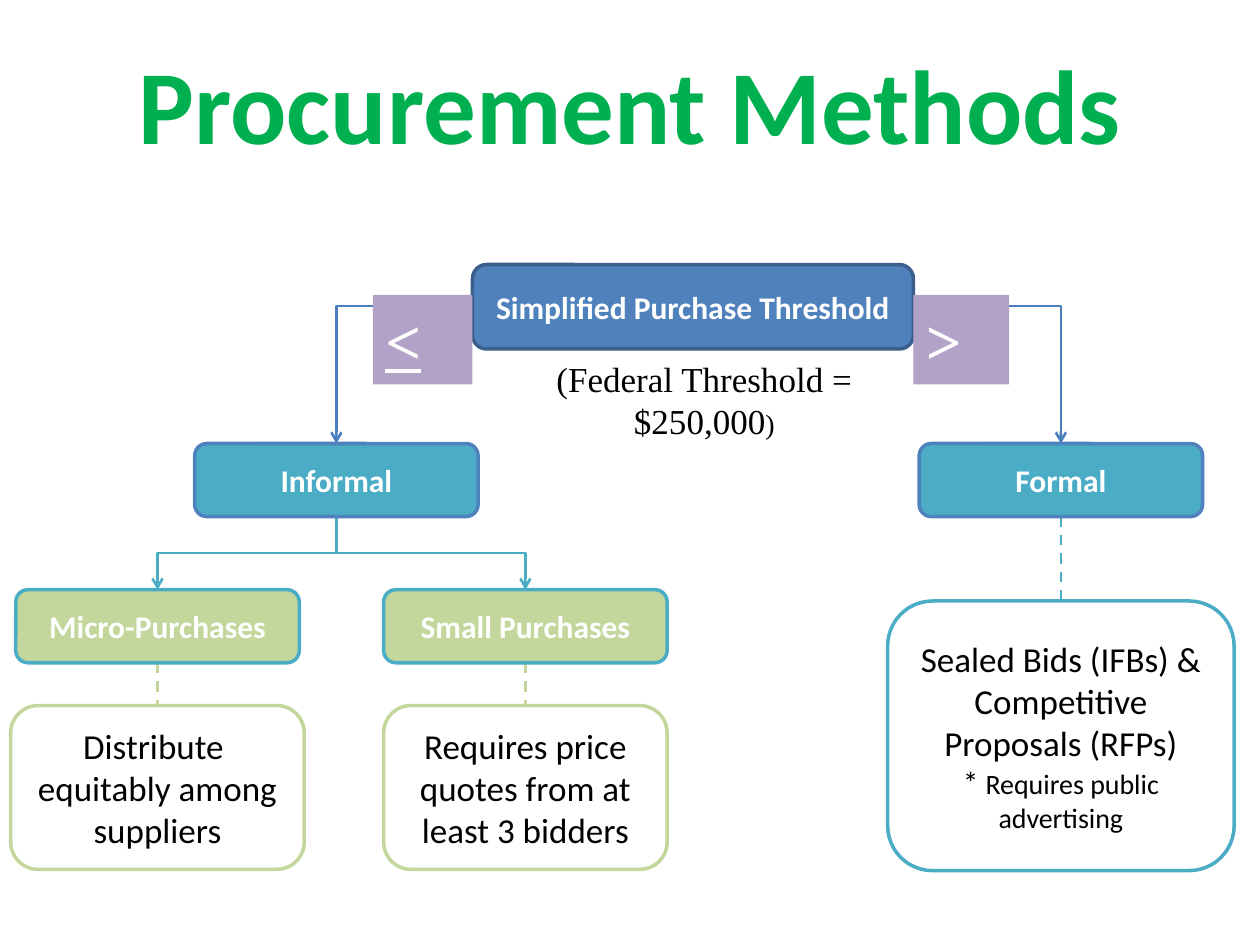
from dataclasses import dataclass

from lxml import etree
from pptx import Presentation
from pptx.dml.color import RGBColor
from pptx.enum.dml import MSO_LINE
from pptx.enum.shapes import MSO_CONNECTOR, MSO_SHAPE
from pptx.enum.text import MSO_ANCHOR, MSO_AUTO_SIZE, PP_ALIGN
from pptx.oxml.ns import qn
from pptx.util import Inches, Pt

ROUNDED, RECTANGLE = MSO_SHAPE.ROUNDED_RECTANGLE, MSO_SHAPE.RECTANGLE
STRAIGHT, ELBOW = MSO_CONNECTOR.STRAIGHT, MSO_CONNECTOR.ELBOW
DASH = MSO_LINE.DASH
MIDDLE, TOP = MSO_ANCHOR.MIDDLE, MSO_ANCHOR.TOP
CENTER, LEFT = PP_ALIGN.CENTER, PP_ALIGN.LEFT
GROW = MSO_AUTO_SIZE.SHAPE_TO_FIT_TEXT


@dataclass(frozen=True)
class Theme:
    """Colours, fonts and type sizes of the slide."""
    white: str = "FFFFFF"
    black: str = "000000"
    green: str = "00B050"
    blue: str = "4F81BD"
    dark_blue: str = "3A5F8C"
    route_blue: str = "4B7EBC"
    teal: str = "4BACC6"
    lime: str = "C3D69B"
    purple: str = "B3A2C7"
    sans: str = "Calibri"
    serif: str = "Times New Roman"
    title: int = 60
    sign: int = 36
    body: int = 20
    label: int = 18
    small: int = 16
    outline: float = 2
    connector: float = 1.5


THEME = Theme()
LABEL_WIDTH, LABEL_HEIGHT = 2.25, 0.58
THRESHOLD_LEFT, THRESHOLD_RIGHT = 3.75, 7.25
MICRO_X, INFORMAL_X, SMALL_X, FORMAL_X = 1.25, 2.67, 4.17, 8.42
ROUTE_Y, METHOD_Y, PURCHASE_Y, DETAIL_Y, FORMAL_DETAIL_Y = 2.43, 3.52, 4.68, 5.6, 4.77


def rgb(colour):
    """Turn a hex string into a colour."""
    return RGBColor.from_string(colour)


def write(frame, paragraphs, colour, font=THEME.sans, bold=False, align=CENTER, anchor=MIDDLE):
    """Fill a text frame with paragraphs, each a list of (text, size) runs."""
    frame.word_wrap = True
    frame.vertical_anchor = anchor
    for index, pieces in enumerate(paragraphs):
        paragraph = frame.add_paragraph() if index else frame.paragraphs[0]
        paragraph.alignment = align
        for text, size in pieces:
            run = paragraph.add_run()
            run.text = text
            run.font.name = font
            run.font.size = Pt(size)
            run.font.bold = bold
            run.font.color.rgb = rgb(colour)


def add_box(slide, preset, bounds, fill, outline=None):
    """Add a filled preset shape, outlined if a colour is given."""
    box = slide.shapes.add_shape(preset, *map(Inches, bounds))
    box.shadow.inherit = False
    box.fill.solid()
    box.fill.fore_color.rgb = rgb(fill)
    if outline:
        box.line.color.rgb = rgb(outline)
        box.line.width = Pt(THEME.outline)
    else:
        box.line.fill.background()
    return box


def add_label(slide, text, bounds, fill, outline):
    """Add a rounded heading box with bold white text."""
    label = add_box(slide, ROUNDED, bounds, fill, outline)
    write(label.text_frame, [[(text, THEME.label)]], THEME.white, bold=True)


def add_method(slide, text, centre, top, fill, outline):
    """Add a standard heading box centred on a column."""
    bounds = (centre - LABEL_WIDTH / 2, top, LABEL_WIDTH, LABEL_HEIGHT)
    add_label(slide, text, bounds, fill, outline)


def add_detail(slide, paragraphs, centre, top, width, height, outline):
    """Add a white rounded box of explanation centred on a column."""
    bounds = (centre - width / 2, top, width, height)
    detail = add_box(slide, ROUNDED, bounds, THEME.white, outline)
    write(detail.text_frame, paragraphs, THEME.black)


def add_sign(slide, text, left, width, underline):
    """Add a purple comparison sign beside the threshold."""
    sign = add_box(slide, RECTANGLE, (left, 2.34, width, 0.71), THEME.purple)
    write(sign.text_frame, [[(text, THEME.sign)]], THEME.white, THEME.serif, True, LEFT, TOP)
    sign.text_frame.auto_size = GROW
    sign.text_frame.paragraphs[0].runs[0].font.underline = underline


def add_line(slide, kind, start, end, colour):
    """Add a connector without a shadow."""
    line = slide.shapes.add_connector(kind, *map(Inches, (*start, *end)))
    line.line.color.rgb = rgb(colour)
    line.line.width = Pt(THEME.connector)
    etree.SubElement(line._element.spPr, qn("a:effectLst"))
    return line


def add_arrowhead(line):
    """Put an open arrowhead at the end of a connector."""
    etree.SubElement(line.line._get_or_add_ln(), qn("a:tailEnd"), type="arrow")


def add_dashed_link(slide, x, top, bottom, colour):
    """Link a heading to its explanation with a dashed vertical line."""
    add_line(slide, STRAIGHT, (x, top), (x, bottom), colour).line.dash_style = DASH


def add_corner_arrow(slide, start_x, end_x):
    """Run sideways from the threshold, then down to a method."""
    arrow = add_line(slide, ELBOW, (start_x, ROUTE_Y), (end_x, METHOD_Y), THEME.route_blue)
    arrow._element.spPr.find(qn("a:prstGeom")).set("prst", "bentConnector2")
    add_arrowhead(arrow)


def add_branch_arrow(slide, end_x):
    """Run down, across and down from Informal to a purchase type."""
    top = METHOD_Y + LABEL_HEIGHT
    centre_x, centre_y = (INFORMAL_X + end_x) / 2, (top + PURCHASE_Y) / 2
    half_span = abs(end_x - INFORMAL_X) / 2
    half_drop = (PURCHASE_Y - top) / 2
    side, degrees = (1, 270) if end_x > INFORMAL_X else (-1, 90)
    start = (centre_x + side * half_drop, centre_y - half_span)
    end = (centre_x - side * half_drop, centre_y + half_span)
    arrow = add_line(slide, ELBOW, start, end, THEME.teal)
    arrow._element.spPr.find(qn("a:xfrm")).set("rot", str(degrees * 60000))
    add_arrowhead(arrow)


def add_title(slide):
    """Place and format the slide title."""
    title = slide.shapes.title
    title.left, title.top, title.width, title.height = map(Inches, (0, 0.2, 10, 1.22))
    write(title.text_frame, [[("Procurement Methods", THEME.title)]], THEME.green, bold=True)


def add_threshold(slide):
    """Add the threshold heading, its amount and the two signs."""
    bounds = (THRESHOLD_LEFT, 2.1, THRESHOLD_RIGHT - THRESHOLD_LEFT, 0.67)
    amount = slide.shapes.add_textbox(*map(Inches, (3.88, 2.79, 3.42, 0.77)))
    pieces = [("(Federal Threshold = $250,000", THEME.body), (")", THEME.small)]
    write(amount.text_frame, [pieces], THEME.black, THEME.serif, anchor=TOP)
    amount.text_frame.auto_size = GROW
    add_label(slide, "Simplified Purchase Threshold", bounds, THEME.blue, THEME.dark_blue)
    add_sign(slide, "<", THRESHOLD_LEFT - 0.79, 0.79, True)
    add_sign(slide, ">", THRESHOLD_RIGHT, 0.76, False)


def add_formal(slide):
    """Add the formal branch."""
    paragraphs = [
        [("Sealed Bids (IFBs) & Competitive Proposals (RFPs)", THEME.body)],
        [("* ", THEME.label), ("Requires public advertising", THEME.small)],
    ]
    add_detail(slide, paragraphs, FORMAL_X, FORMAL_DETAIL_Y, 2.75, 2.14, THEME.teal)
    add_dashed_link(slide, FORMAL_X, METHOD_Y + LABEL_HEIGHT, FORMAL_DETAIL_Y, THEME.teal)
    add_corner_arrow(slide, THRESHOLD_RIGHT, FORMAL_X)
    add_method(slide, "Formal", FORMAL_X, METHOD_Y, THEME.teal, THEME.blue)


def add_informal(slide):
    """Add the informal branch with its two purchase types."""
    purchases = [
        ("Small Purchases", SMALL_X, 2.25, ["Requires price quotes from at least 3 bidders"]),
        ("Micro-Purchases", MICRO_X, 2.33, ["Distribute ", "equitably among suppliers"]),
    ]
    for name, x, width, sentences in purchases:
        paragraphs = [[(sentence, THEME.body)] for sentence in sentences]
        add_detail(slide, paragraphs, x, DETAIL_Y, width, 1.3, THEME.lime)
        add_dashed_link(slide, x, PURCHASE_Y + LABEL_HEIGHT, DETAIL_Y, THEME.lime)
        add_method(slide, name, x, PURCHASE_Y, THEME.lime, THEME.teal)
        add_branch_arrow(slide, x)
    add_corner_arrow(slide, THRESHOLD_LEFT, INFORMAL_X)
    add_method(slide, "Informal", INFORMAL_X, METHOD_Y, THEME.teal, THEME.blue)


def main():
    """Build and save the slide."""
    deck = Presentation()
    deck.slide_width, deck.slide_height = Inches(10), Inches(7.5)
    slide = deck.slides.add_slide(deck.slide_layouts.get_by_name("Title Only"))
    add_title(slide)
    add_formal(slide)
    add_informal(slide)
    add_threshold(slide)
    deck.save("out.pptx")


if __name__ == "__main__":
    main()
